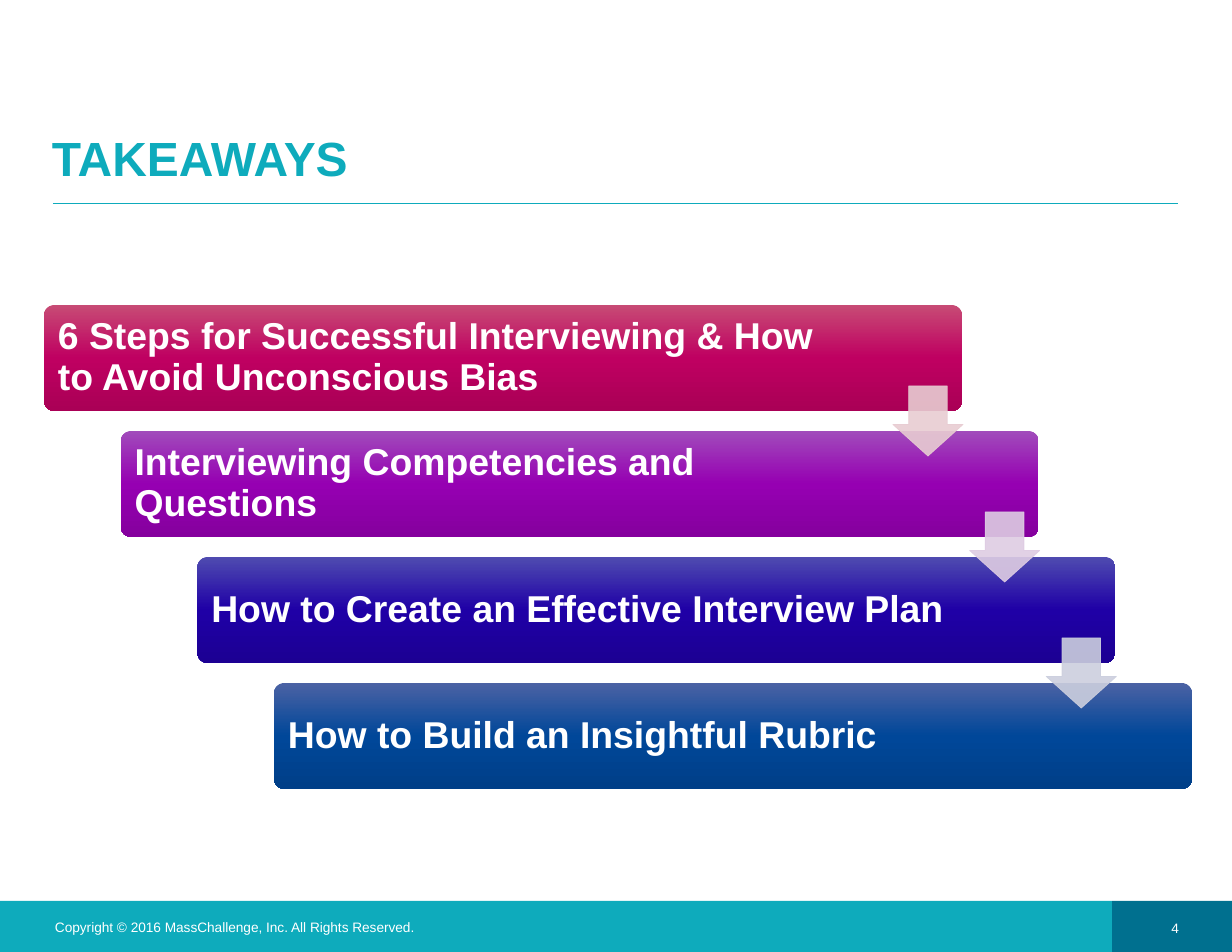
from dataclasses import dataclass

from lxml import etree
from pptx import Presentation
from pptx.dml.color import RGBColor
from pptx.enum.shapes import MSO_CONNECTOR, MSO_SHAPE
from pptx.enum.text import MSO_ANCHOR, PP_ALIGN
from pptx.oxml.ns import qn
from pptx.util import Pt

SCALE = 914400 / 112  # EMU in one px


@dataclass(frozen=True)
class Theme:
    font: str = "Arial"
    teal: str = "0EABBC"
    deep: str = "00708F"
    white: str = "FFFFFF"
    title: float = 30.8
    step: float = 24
    small: float = 8.8


THEME = Theme()

# Text, text width, gradient from top to bottom
STEPS = [
    ("6 Steps for Successful Interviewing & How to Avoid Unconscious Bias",
     795, ("C74B75", "BF0061", "AA0056")),
    ("Interviewing Competencies and Questions",
     766, ("A14BBB", "9600B2", "85009E")),
    ("How to Create an Effective Interview Plan",
     766, ("4F4BB0", "1F00A6", "1C0093")),
    ("How to Build an Insightful Rubric",
     766, ("4B62A4", "004799", "003F88")),
]
ARROWS = ["E8CCD2", "DECCE3", "CCCFDE"]


def emu(*px):
    return [round(n * SCALE) for n in px]


def add_part(slide, kind, box, color=None):
    part = slide.shapes.add_shape(kind, *emu(*box))
    part.shadow.inherit = False
    part.line.fill.background()
    if color:
        part.fill.solid()
        part.fill.fore_color.rgb = RGBColor.from_string(color)
    return part


def add_text(slide, box, text, size, color, bold=False,
             anchor=MSO_ANCHOR.MIDDLE, align=PP_ALIGN.LEFT, inset=None):
    frame = slide.shapes.add_textbox(*emu(*box)).text_frame
    frame.word_wrap = True
    frame.vertical_anchor = anchor
    if inset is not None:
        gap, = emu(inset)
        frame.margin_left = frame.margin_right = gap
        frame.margin_top = frame.margin_bottom = gap
    para = frame.paragraphs[0]
    para.alignment = align
    if bold:
        para.line_spacing = 0.9
    run = para.add_run()
    run.text = text
    run.font.name = THEME.font
    run.font.size = Pt(size)
    run.font.bold = bold
    run.font.color.rgb = RGBColor.from_string(color)


def set_blend(part, colors):
    """Fill from top to bottom with evenly spaced colours."""
    part.fill.gradient()
    grad = part._element.spPr.find(qn("a:gradFill"))
    for node in list(grad):
        grad.remove(node)
    stops = etree.SubElement(grad, qn("a:gsLst"))
    for i, color in enumerate(colors):
        pos = 100000 * i // (len(colors) - 1)
        stop = etree.SubElement(stops, qn("a:gs"), pos=str(pos))
        etree.SubElement(stop, qn("a:srgbClr"), val=color)
    etree.SubElement(grad, qn("a:lin"), ang="5400000", scaled="0")


def add_header(slide, x, y, w, h):
    add_text(slide, (x, y, w, h - 11), "TAKEAWAYS", THEME.title, THEME.teal,
             bold=True, anchor=MSO_ANCHOR.BOTTOM)
    # Rule under the title
    rule = slide.shapes.add_connector(
        MSO_CONNECTOR.STRAIGHT, *emu(x + 12, y + h, x + w - 12, y + h))
    rule.line.color.rgb = RGBColor.from_string(THEME.teal)
    rule.line.width = Pt(0.5)
    etree.SubElement(rule._element.spPr, qn("a:effectLst"))


def add_bar(slide, x, y, w, h, step):
    text, wide, colors = step
    bar = add_part(slide, MSO_SHAPE.ROUNDED_RECTANGLE, (x, y, w, h))
    bar.adjustments[0] = 0.1
    set_blend(bar, colors)
    add_text(slide, (x + 3, y + 3, wide, h - 6), text, THEME.step,
             THEME.white, bold=True, inset=11)


def add_arrow(slide, x, y, size, color):
    arrow = add_part(slide, MSO_SHAPE.DOWN_ARROW, (x, y, size, size), color)
    arrow.adjustments[0] = 0.55
    arrow.adjustments[1] = 0.45
    arrow.line.color.rgb = RGBColor.from_string(color)
    arrow.line.width = Pt(0.5)
    # Let the bars show through fill and line
    for node in arrow._element.spPr.iter(qn("a:srgbClr")):
        etree.SubElement(node, qn("a:alpha"), val="90000")


def add_stairs(slide, x, y, w, h):
    wide, high, size = 918, 106, 70
    last = len(STEPS) - 1
    spots = [(x + (w - wide) * i / last, y + (h - high) * i / last)
             for i in range(len(STEPS))]
    for (left, top), step in zip(spots, STEPS):
        add_bar(slide, left, top, wide, high, step)
    # Arrows hang from the right end of each bar but the last
    for (left, top), color in zip(spots, ARROWS):
        add_arrow(slide, left + wide - size + 1, top + 81, size, color)


def add_footer(slide, x, y, w, h):
    tab = 120
    add_part(slide, MSO_SHAPE.RECTANGLE, (x, y, w - tab, h), THEME.teal)
    add_part(slide, MSO_SHAPE.RECTANGLE, (x + w - tab, y, tab, h), THEME.deep)
    add_text(slide, (x + 44, y + 1, 416, h - 1),
             "Copyright © 2016 MassChallenge, Inc. All Rights Reserved.",
             THEME.small, THEME.white)
    add_text(slide, (x + w - 92, y + 2, 50, h - 1), "4",
             THEME.small, THEME.white, align=PP_ALIGN.RIGHT)


def main():
    deck = Presentation()
    deck.slide_width, deck.slide_height = emu(1232, 952)
    slide = deck.slides.add_slide(deck.slide_layouts[6])
    add_footer(slide, 0, 901, 1232, 51)
    add_header(slide, 41, 51, 1149, 152)
    add_stairs(slide, 44, 305, 1148, 484)
    deck.save("out.pptx")


if __name__ == "__main__":
    main()
